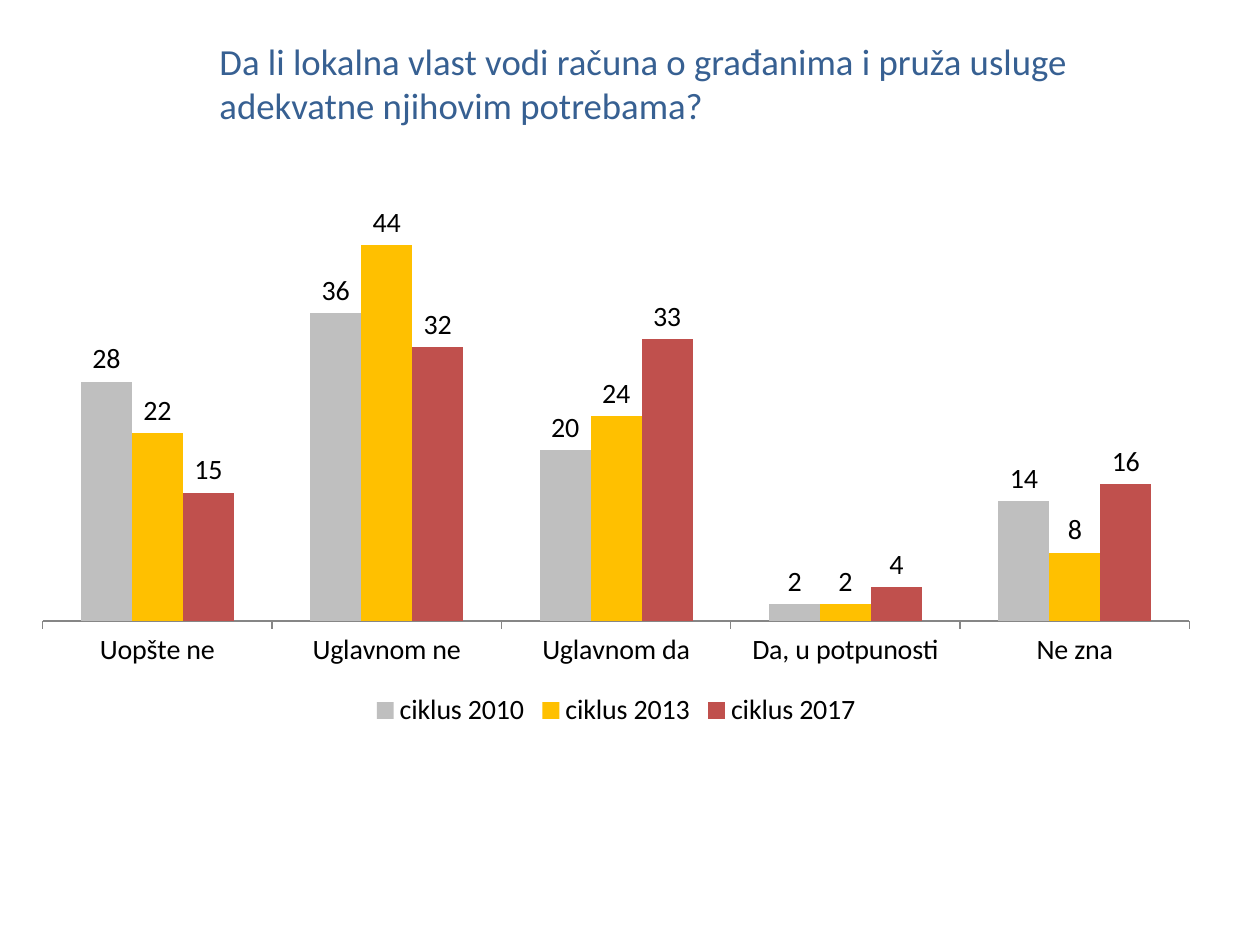
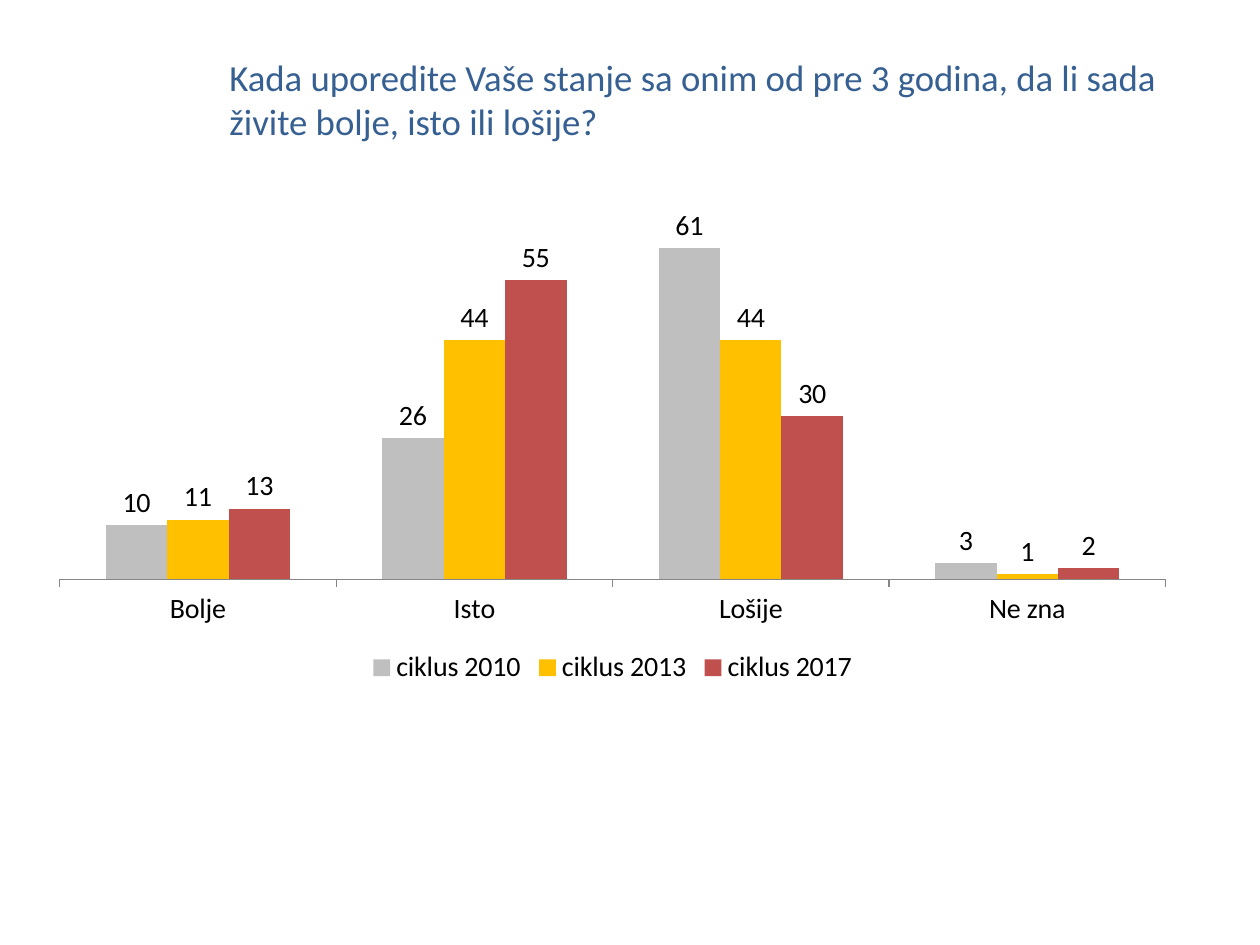
"""Build two survey slides comparing the 2010, 2013 and 2017 cycles."""
from pptx import Presentation
from pptx.chart.data import CategoryChartData
from pptx.dml.color import RGBColor
from pptx.enum.chart import XL_CHART_TYPE as ChartType
from pptx.enum.chart import XL_LABEL_POSITION as LabelPosition
from pptx.enum.chart import XL_LEGEND_POSITION as LegendPosition
from pptx.enum.chart import XL_TICK_MARK as TickMark
from pptx.enum.text import MSO_ANCHOR as Anchor
from pptx.enum.text import MSO_AUTO_SIZE as AutoSize
from pptx.enum.text import PP_ALIGN as Align
from pptx.util import Cm, Pt

FONT = "Calibri"
TITLE_BLUE = RGBColor(0x37, 0x60, 0x92)
BLACK = RGBColor(0x00, 0x00, 0x00)
AXIS_GRAY = RGBColor(0x86, 0x86, 0x86)
CYCLES = {
    "ciklus 2010": RGBColor(0xBF, 0xBF, 0xBF),
    "ciklus 2013": RGBColor(0xFF, 0xC0, 0x00),
    "ciklus 2017": RGBColor(0xC0, 0x50, 0x4D),
}
TITLE_FRAME = {"word_wrap": True, "auto_size": AutoSize.SHAPE_TO_FIT_TEXT,
               "vertical_anchor": Anchor.TOP}
TITLE_FONT = {"name": FONT, "size": Pt(21), "bold": False}
CHART_FONT = {"name": FONT, "size": Pt(16), "bold": False}
LABELS = {"show_value": True, "position": LabelPosition.OUTSIDE_END}
LEGEND = {"position": LegendPosition.BOTTOM, "include_in_layout": False}
CATEGORY_AXIS = {"major_tick_mark": TickMark.OUTSIDE, "has_major_gridlines": False}
VALUE_AXIS = {"visible": False, "has_major_gridlines": False, "minimum_scale": 0}

QUESTIONS = [
    {
        "title": "Da li lokalna vlast vodi računa o građanima i pruža usluge "
                 "adekvatne njihovim potrebama?",
        "title_place": (4.17, 0.66, 19.86, 2.06),
        "chart_place": (0.38, 3.68, 24.08, 11.1),
        "top": 50,
        "answers": {
            "Uopšte ne": (28, 22, 15),
            "Uglavnom ne": (36, 44, 32),
            "Uglavnom da": (20, 24, 33),
            "Da, u potpunosti": (2, 2, 4),
            "Ne zna": (14, 8, 16),
        },
    },
    {
        "title": "Kada uporedite Vaše stanje sa onim od pre 3 godina, da li sada "
                 "živite bolje, isto ili lošije?",
        "title_place": (4.37, 0.97, 20.19, 2.06),
        "chart_place": (0.74, 3.81, 23.22, 10.11),
        "top": 70,
        "answers": {
            "Bolje": (10, 11, 13),
            "Isto": (26, 44, 55),
            "Lošije": (61, 44, 30),
            "Ne zna": (3, 1, 2),
        },
    },
]


def apply_format(target, values):
    """Set every listed attribute on the target."""
    for name, value in values.items():
        setattr(target, name, value)


deck = Presentation()
deck.slide_width, deck.slide_height = Cm(25.4), Cm(19.05)

for question in QUESTIONS:
    page = deck.slides.add_slide(deck.slide_layouts[5])
    title = page.shapes.title
    place = map(Cm, question["title_place"])
    apply_format(title, dict(zip(("left", "top", "width", "height"), place)))
    apply_format(title.text_frame, TITLE_FRAME)
    para = title.text_frame.paragraphs[0]
    para.alignment = Align.LEFT
    span = para.add_run()
    span.text = question["title"]
    apply_format(span.font, TITLE_FONT)
    span.font.color.rgb = TITLE_BLUE

    data = CategoryChartData()
    data.categories = list(question["answers"])
    for cycle, values in zip(CYCLES, zip(*question["answers"].values())):
        data.add_series(cycle, values)
    chart = page.shapes.add_chart(
        ChartType.COLUMN_CLUSTERED, *map(Cm, question["chart_place"]), data).chart
    apply_format(chart, {"has_title": False, "has_legend": True})
    apply_format(chart.font, CHART_FONT)
    chart.font.color.rgb = BLACK
    apply_format(chart.legend, LEGEND)
    apply_format(chart.category_axis, CATEGORY_AXIS)
    chart.category_axis.format.line.color.rgb = AXIS_GRAY
    apply_format(chart.value_axis, VALUE_AXIS)
    chart.value_axis.maximum_scale = question["top"]

    plot = chart.plots[0]
    apply_format(plot, {"gap_width": 150, "overlap": 0, "vary_by_categories": False,
                        "has_data_labels": True})
    apply_format(plot.data_labels, LABELS)
    for series, color in zip(plot.series, CYCLES.values()):
        series.format.fill.solid()
        series.format.fill.fore_color.rgb = color

deck.save("out.pptx")
